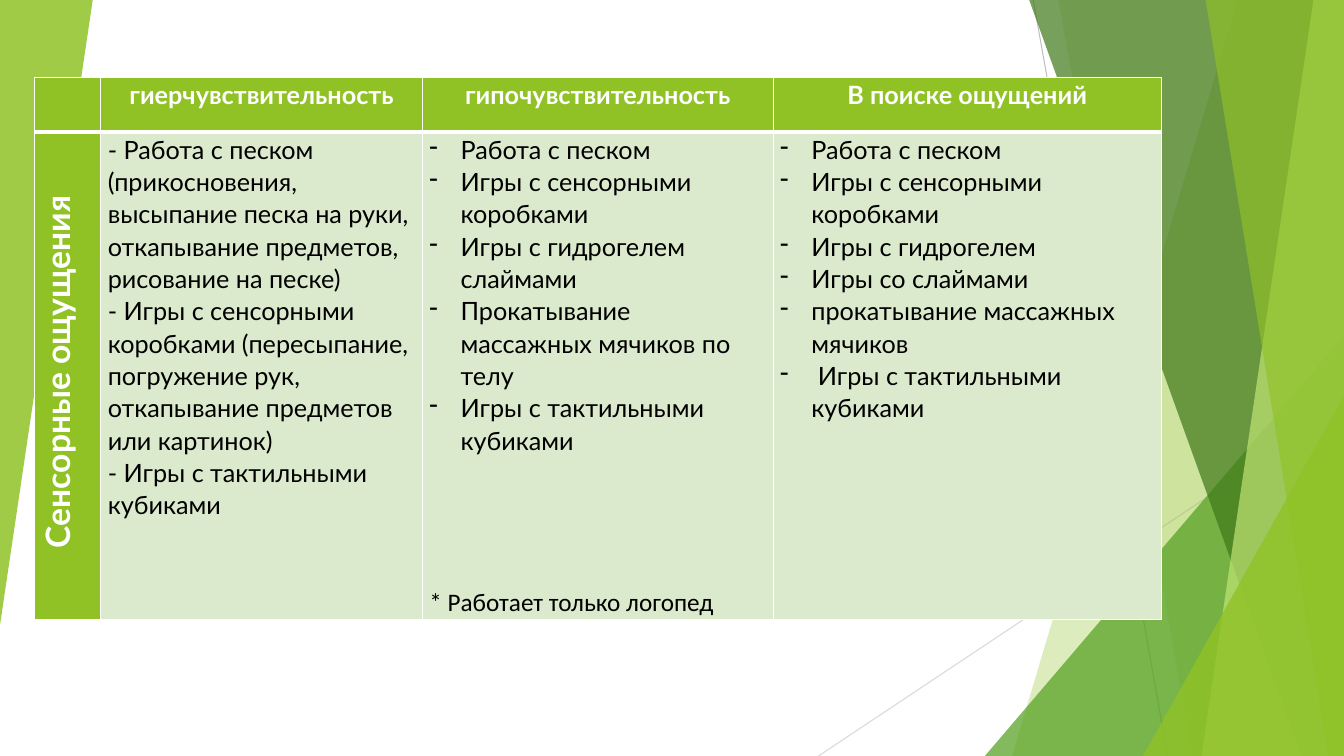
from dataclasses import dataclass

from lxml.etree import SubElement
from pptx import Presentation
from pptx.dml.color import RGBColor
from pptx.enum.shapes import MSO_CONNECTOR, MSO_SHAPE
from pptx.enum.text import MSO_ANCHOR, PP_ALIGN
from pptx.oxml.ns import qn
from pptx.util import Emu, Inches, Pt

SLIDE_WIDTH, SLIDE_HEIGHT = Inches(13.33), Inches(7.5)
GREEN, PALE_GREEN, WHITE, BLACK = "90C226", "DBE9CD", "FFFFFF", "000000"
FONT = "Lato"


# Positions below are percentages of the slide's width (x) and height (y)
@dataclass(frozen=True)
class Ray:
    start: tuple[float, float]
    end: tuple[float, float]
    color: str


@dataclass(frozen=True)
class Facet:
    """Full-height panel reaching the right edge, with a slanted left side."""
    top_x: float
    bottom_x: float
    color: str
    opacity: int


@dataclass(frozen=True)
class Wedge:
    """Right triangle with its upright side on the right before rotation."""
    left: float
    top: float
    width: float
    height: float
    color: str
    opacity: int
    rotation: int = 0


@dataclass(frozen=True)
class Column:
    width: float
    heading: str
    items: tuple[str, ...] = ()
    bulleted: bool = True
    footnote: str = ""


RAYS = (
    Ray((76.88, 0), (86.88, 100), "BFBFBF"),
    Ray((100, 53.73), (60.9, 100), "D9D9D9"),
)
DECORATIONS = (
    Facet(92.1, 75.3, GREEN, 30),
    Facet(78.75, 88.73, GREEN, 20),
    Wedge(73.28, 44.4, 26.72, 55.6, "54A021", 72),
    Facet(76.58, 96.83, "3F7819", 70),
    Facet(97.73, 89.4, "C0E474", 70),
    Facet(89.7, 98.85, GREEN, 65),
    Wedge(85.05, 52.4, 14.95, 47.6, GREEN, 80),
    Wedge(0, 0, 6.9, 82.67, GREEN, 85, rotation=180),
)
TABLE_LEFT, TABLE_TOP = 2.55, 10.27
ROW_HEIGHTS = (7.2, 64.53)
ROW_TITLE = "Сенсорные ощущения"
COLUMNS = (
    Column(4.95, ""),
    Column(23.93, "гиерчувствительность", (
        "- Работа с песком (прикосновения, высыпание песка на руки, "
        "откапывание предметов, рисование на песке)",
        "- Игры с сенсорными коробками (пересыпание, погружение рук, "
        "откапывание предметов или картинок)",
        "- Игры с тактильными кубиками",
    ), bulleted=False),
    Column(26.1, "гипочувствительность", (
        "Работа с песком",
        "Игры с сенсорными коробками",
        "Игры с гидрогелем слаймами",
        "Прокатывание массажных мячиков по телу",
        "Игры с тактильными кубиками",
    ), footnote="* Работает только логопед"),
    Column(28.88, "В поиске ощущений", (
        "Работа с песком",
        "Игры с сенсорными коробками",
        "Игры с гидрогелем",
        "Игры со слаймами",
        "прокатывание массажных мячиков",
        " Игры с тактильными кубиками",
    )),
)


def across(percent: float) -> Emu:
    return Emu(round(SLIDE_WIDTH * percent / 100))


def down(percent: float) -> Emu:
    return Emu(round(SLIDE_HEIGHT * percent / 100))


def rgb(color: str) -> RGBColor:
    return RGBColor.from_string(color)


def paint(shape, color: str, opacity: int) -> None:
    shape.shadow.inherit = False
    shape.line.fill.background()
    shape.fill.solid()
    shape.fill.fore_color.rgb = rgb(color)
    color_element = next(shape.element.spPr.iter(qn("a:srgbClr")))
    SubElement(color_element, qn("a:alpha"), val=str(opacity * 1000))


def draw_ray(slide, ray: Ray) -> None:
    connector = slide.shapes.add_connector(
        MSO_CONNECTOR.STRAIGHT, across(ray.start[0]), down(ray.start[1]),
        across(ray.end[0]), down(ray.end[1]))
    connector.line.color.rgb = rgb(ray.color)
    connector.line.width = Pt(0.75)
    SubElement(connector.element.spPr, qn("a:effectLst"))


def draw_facet(slide, facet: Facet) -> None:
    builder = slide.shapes.build_freeform(across(facet.top_x), 0)
    builder.add_line_segments([
        (across(100), 0), (across(100), down(100)),
        (across(facet.bottom_x), down(100))], close=True)
    paint(builder.convert_to_shape(), facet.color, facet.opacity)


def draw_wedge(slide, wedge: Wedge) -> None:
    shape = slide.shapes.add_shape(
        MSO_SHAPE.ISOSCELES_TRIANGLE, across(wedge.left), down(wedge.top),
        across(wedge.width), down(wedge.height))
    shape.adjustments[0] = 1
    shape.rotation = wedge.rotation
    paint(shape, wedge.color, wedge.opacity)


def write(paragraph, text: str, *, size: int = 18, font: str = FONT,
          color: str = BLACK, bold: bool = False, align=PP_ALIGN.LEFT,
          bullet: str = "", indent: float = 0, space_before: int = 0) -> None:
    paragraph.alignment = align
    paragraph.line_spacing = 1.07
    paragraph.space_before = Pt(space_before)
    properties = paragraph._p.get_or_add_pPr()
    properties.set("marL", str(Inches(indent)))
    properties.set("indent", str(-Inches(indent) if bullet else 0))
    if bullet:
        SubElement(properties, qn("a:buChar"), char=bullet)
    run = paragraph.add_run()
    run.text = text
    run.font.size, run.font.name, run.font.bold = Pt(size), font, bold
    run.font.color.rgb = rgb(color)


def format_cell(cell, fill: str, top: int = 1, bottom: int = 1) -> None:
    cell.margin_left = cell.margin_right = Inches(0.07)
    cell.margin_top = cell.margin_bottom = 0
    properties = cell._tc.get_or_add_tcPr()
    for side, width in (("L", 1), ("R", 1), ("T", top), ("B", bottom)):
        border = SubElement(properties, qn(f"a:ln{side}"), w=str(Pt(width)))
        SubElement(SubElement(border, qn("a:solidFill")), qn("a:srgbClr"), val=WHITE)
    cell.fill.solid()
    cell.fill.fore_color.rgb = rgb(fill)


def fill_body(cell, column: Column) -> None:
    frame = cell.text_frame
    for index, item in enumerate(column.items):
        paragraph = frame.add_paragraph() if index else frame.paragraphs[0]
        if column.bulleted:
            write(paragraph, item, bullet="-", indent=0.31)
        else:
            write(paragraph, item)
    if column.footnote:
        write(frame.add_paragraph(), column.footnote, font="Calibri", space_before=93)


def draw_table(slide) -> None:
    table = slide.shapes.add_table(
        len(ROW_HEIGHTS), len(COLUMNS), across(TABLE_LEFT), down(TABLE_TOP),
        across(sum(column.width for column in COLUMNS)),
        down(sum(ROW_HEIGHTS))).table
    table.horz_banding = False
    for row, height in zip(table.rows, ROW_HEIGHTS):
        row.height = down(height)
    for index, column in enumerate(COLUMNS):
        table.columns[index].width = across(column.width)
        header, body = table.cell(0, index), table.cell(1, index)
        format_cell(header, GREEN, bottom=3)
        format_cell(body, PALE_GREEN if column.items else GREEN, top=3)
        if column.heading:
            write(header.text_frame.paragraphs[0], column.heading,
                  color=WHITE, bold=True, align=PP_ALIGN.CENTER)
        fill_body(body, column)

    # Vertical row title
    title_cell = table.cell(1, 0)
    title_cell.vertical_anchor = MSO_ANCHOR.MIDDLE
    title_cell._tc.get_or_add_tcPr().set("vert", "vert270")
    write(title_cell.text_frame.paragraphs[0], ROW_TITLE, size=24,
          color=WHITE, bold=True, align=PP_ALIGN.CENTER, indent=0.08)


def main() -> None:
    presentation = Presentation()
    presentation.slide_width, presentation.slide_height = SLIDE_WIDTH, SLIDE_HEIGHT
    slide = presentation.slides.add_slide(presentation.slide_layouts[6])

    # Background decoration, back to front
    for ray in RAYS:
        draw_ray(slide, ray)
    for decoration in DECORATIONS:
        if isinstance(decoration, Facet):
            draw_facet(slide, decoration)
        else:
            draw_wedge(slide, decoration)

    # Activities by type of sensitivity
    draw_table(slide)
    presentation.save("out.pptx")


if __name__ == "__main__":
    main()
